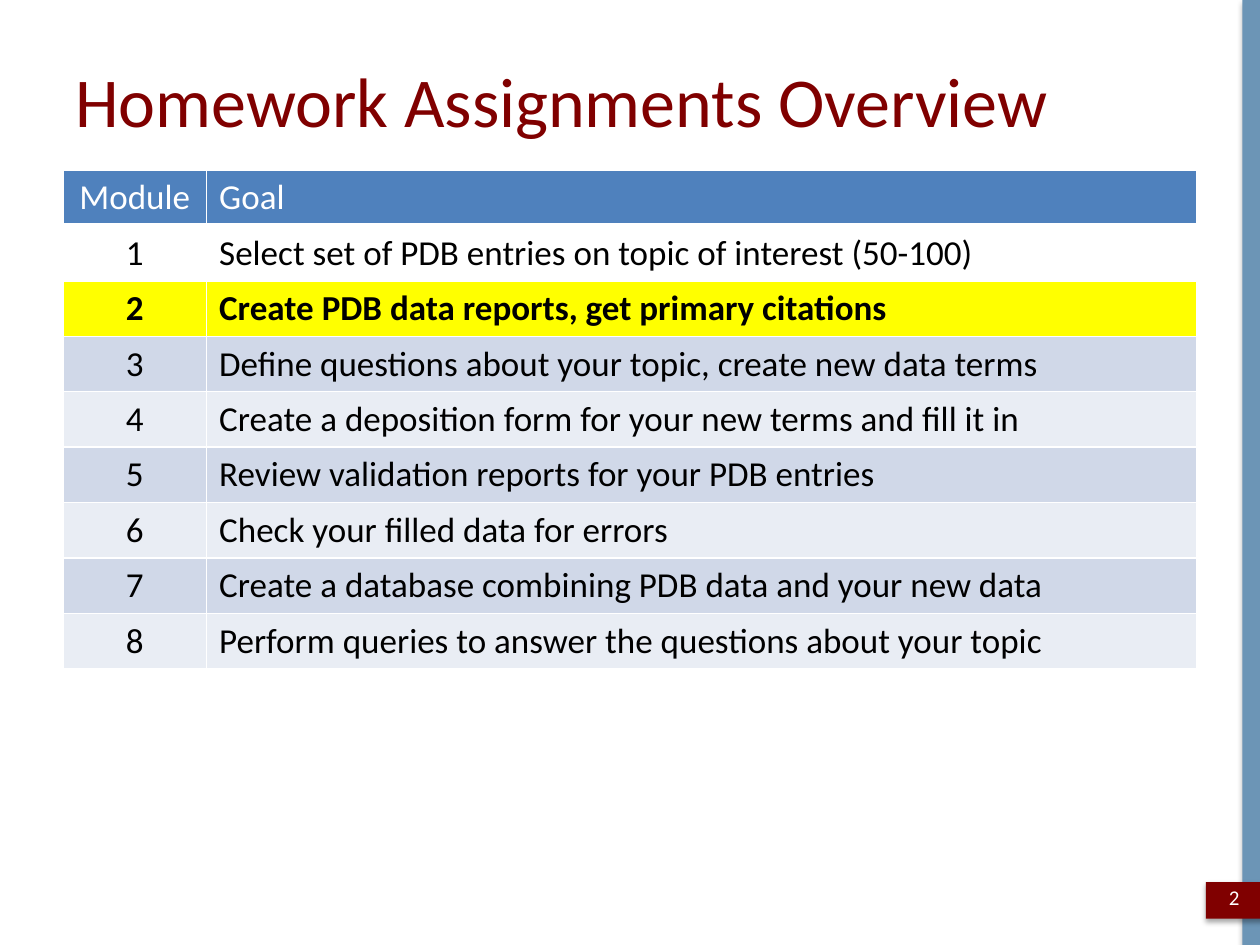
from lxml import etree
from pptx import Presentation
from pptx import util as u
from pptx.dml.color import RGBColor
from pptx.enum import shapes, text
from pptx.oxml import parse_xml
from pptx.oxml.ns import nsdecls, qn

COLORS = {
    "maroon": "800000",
    "steel": "6C95B6",
    "header": "4F81BD",
    "highlight": "FFFF00",
    "odd": "D0D8E8",
    "even": "E9EDF4",
    "black": "000000",
    "white": "FFFFFF",
}

GOALS = [
    "Select set of PDB entries on topic of interest (50-100)",
    "Create PDB data reports, get primary citations",
    "Define questions about your topic, create new data terms",
    "Create a deposition form for your new terms and fill it in",
    "Review validation reports for your PDB entries",
    "Check your filled data for errors",
    "Create a database combining PDB data and your new data",
    "Perform queries to answer the questions about your topic",
]
CURRENT_MODULE = 2


class SlideBuilder:
    font = "Calibri"

    def __init__(self, slide):
        self.slide = slide

    def color(self, name):
        return RGBColor.from_string(COLORS[name])

    def set_words(self, frame, words, size, color, align, bold=False):
        paragraph = frame.paragraphs[0]
        paragraph.text = words
        paragraph.alignment = align
        paragraph.font.name = self.font
        paragraph.font.size = u.Pt(size)
        paragraph.font.bold = bold
        paragraph.font.color.rgb = self.color(color)

    def panel(self, left, top, width, height, fill):
        panel = self.slide.shapes.add_shape(
            shapes.MSO_SHAPE.RECTANGLE, *map(u.Inches, (left, top, width, height)))
        panel.fill.solid()
        panel.fill.fore_color.rgb = self.color(fill)
        panel.line.fill.background()
        panel.shadow.inherit = False
        effects = panel._element.spPr.find(qn("a:effectLst"))
        effects.append(parse_xml(
            f'<a:outerShdw {nsdecls("a")} blurRad="{u.Pt(3.1)}" dist="{u.Pt(1.8)}" '
            f'dir="5400000" rotWithShape="0"><a:srgbClr val="{COLORS["black"]}">'
            '<a:alpha val="35000"/></a:srgbClr></a:outerShdw>'))

    def label(self, left, top, width, height, words, size, color, align):
        frame = self.slide.shapes.add_textbox(
            *map(u.Inches, (left, top, width, height))).text_frame
        frame.word_wrap = True
        frame.vertical_anchor = text.MSO_ANCHOR.MIDDLE
        self.set_words(frame, words, size, color, align)

    def border(self, cell, bottom):
        properties = cell._tc.get_or_add_tcPr()
        widths = {"lnL": 1, "lnR": 1, "lnT": 1, "lnB": bottom}
        for position, (side, width) in enumerate(widths.items()):
            line = etree.Element(qn(f"a:{side}"), w=str(u.Pt(width)))
            fill = etree.SubElement(line, qn("a:solidFill"))
            etree.SubElement(fill, qn("a:srgbClr"), val=COLORS["white"])
            properties.insert(position, line)

    def table(self, left, top, widths, row_height, rows):
        table = self.slide.shapes.add_table(
            len(rows), len(widths), u.Inches(left), u.Inches(top),
            u.Inches(sum(widths)), u.Inches(row_height * len(rows))).table
        for column, width in zip(table.columns, widths):
            column.width = u.Inches(width)
        aligns = (text.PP_ALIGN.CENTER, text.PP_ALIGN.LEFT)
        for number, (words, fill, color, bold) in enumerate(rows):
            table.rows[number].height = u.Inches(row_height)
            for cell, entry, align in zip(table.rows[number].cells, words, aligns):
                self.set_words(cell.text_frame, entry, 20, color, align, bold)
                if fill:
                    cell.fill.solid()
                    cell.fill.fore_color.rgb = self.color(fill)
                else:
                    cell.fill.background()
                self.border(cell, 1 if number else 3)


def module_fill(module):
    if module == CURRENT_MODULE:
        return "highlight"
    if module < CURRENT_MODULE:
        return None
    return "odd" if module % 2 else "even"


def main():
    deck = Presentation()
    deck.slide_width, deck.slide_height = u.Inches(10), u.Inches(7.5)
    page = SlideBuilder(deck.slides.add_slide(deck.slide_layouts[6]))

    page.panel(9.86, 0, 0.14, 7.5, "steel")
    page.panel(9.57, 7, 0.48, 0.29, "maroon")
    page.label(0.5, 0.3, 9, 0.98, "Homework Assignments Overview", 40, "maroon",
               text.PP_ALIGN.LEFT)

    assignments = [(("Module", "Goal"), "header", "white", False)]
    for module, goal in enumerate(GOALS, 1):
        assignments.append(((str(module), goal), module_fill(module), "black",
                            module == CURRENT_MODULE))
    page.table(0.5, 1.35, (1.14, 7.86), 0.44, assignments)
    page.label(9.57, 6.92, 0.45, 0.4, "2", 12, "white", text.PP_ALIGN.CENTER)

    deck.save("out.pptx")


if __name__ == "__main__":
    main()
